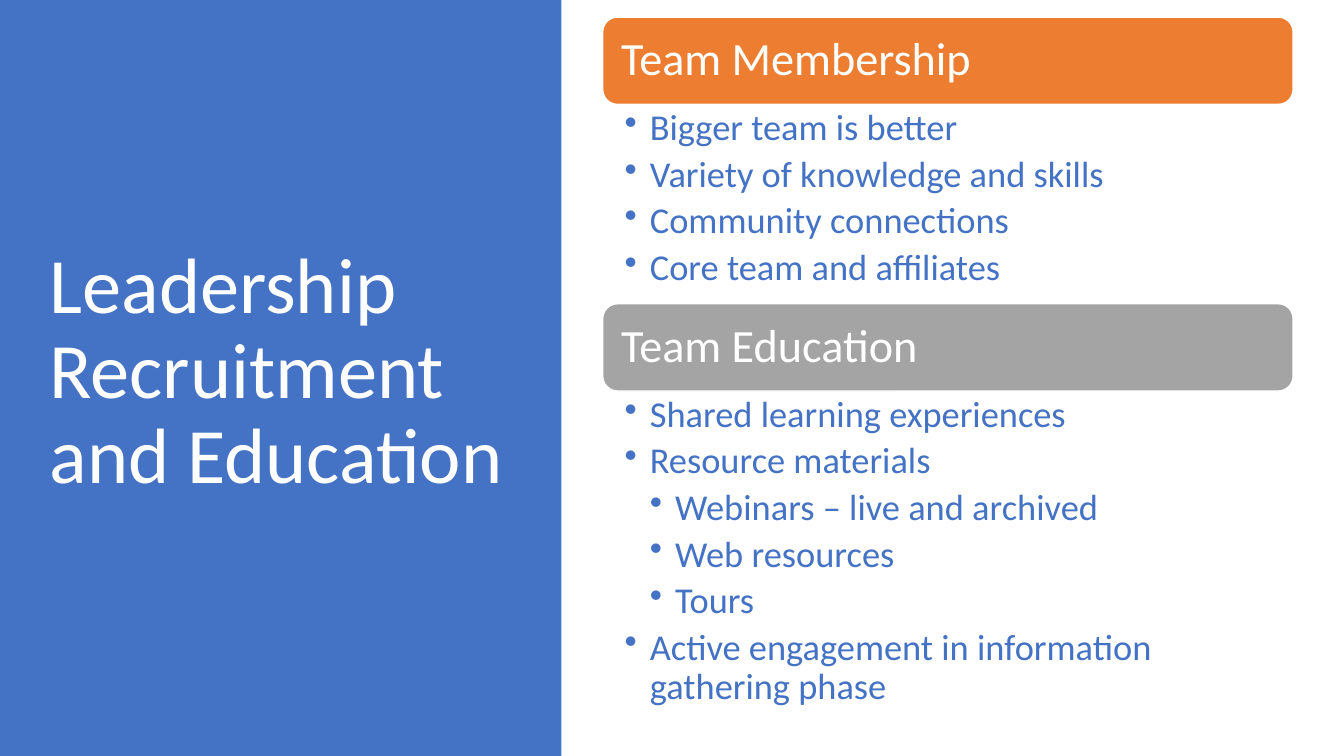
"""Build the slide on leadership recruitment and education."""
import pptx
import pptx.dml.color
import pptx.enum.shapes
import pptx.enum.text
import pptx.oxml
import pptx.oxml.ns
import pptx.util

Pt = pptx.util.Pt
SHAPE = pptx.enum.shapes.MSO_SHAPE
ANCHOR = pptx.enum.text.MSO_ANCHOR
BLUE, ORANGE, GRAY, WHITE = "4472C4", "ED7D31", "A4A4A4", "FFFFFF"
LEFT, WIDTH, HEADER_HEIGHT, INDENT = 430.5, 493.2, 62.4, 18


def color(value):
    return pptx.dml.color.RGBColor.from_string(value)


def write(sp, lines, size, ink, anchor, margins):
    tf = sp.text_frame
    tf.word_wrap = True
    tf.vertical_anchor = anchor
    tf.margin_left, tf.margin_top, tf.margin_right, tf.margin_bottom = map(Pt, margins)
    for i, line in enumerate(lines):
        p = tf.add_paragraph() if i else tf.paragraphs[0]
        p.text = line
        p.alignment = pptx.enum.text.PP_ALIGN.LEFT
        p.line_spacing = 0.9
        p.font.name = "Calibri"
        p.font.size = Pt(size)
        p.font.color.rgb = color(ink)
    return tf.paragraphs


sections = [
    ("Team Membership", ORANGE, 12.2, 142.6, [
        (1, "Bigger team is better"),
        (1, "Variety of knowledge and skills"),
        (1, "Community connections"),
        (1, "Core team and affiliates"),
    ]),
    ("Team Education", GRAY, 216.9, 241.9, [
        (1, "Shared learning experiences"),
        (1, "Resource materials"),
        (2, "Webinars – live and archived"),
        (2, "Web resources"),
        (2, "Tours"),
        (1, "Active engagement in information gathering phase"),
    ]),
]

prs = pptx.Presentation()
prs.slide_width, prs.slide_height = Pt(960), Pt(540)
s = prs.slides.add_slide(prs.slide_layouts[6])

panel = s.shapes.add_shape(SHAPE.RECTANGLE, 0, 0, Pt(401), Pt(540))
panel.shadow.inherit = False
panel.fill.solid()
panel.fill.fore_color.rgb = color(BLUE)
panel.line.fill.background()

title = s.shapes.add_textbox(Pt(28.4), Pt(49.7), Pt(345), Pt(433.5))
write(title, ["Leadership\vRecruitment and Education"], 56, WHITE,
      ANCHOR.MIDDLE, (7.2, 3.6, 7.2, 3.6))

for heading, fill, top, height, bullets in sections:
    header = s.shapes.add_shape(SHAPE.ROUNDED_RECTANGLE, Pt(LEFT), Pt(top),
                                Pt(WIDTH), Pt(HEADER_HEIGHT))
    header.adjustments[0] = 0.17
    header.shadow.inherit = False
    header.fill.solid()
    header.fill.fore_color.rgb = color(fill)
    header.line.color.rgb = color(WHITE)
    header.line.width = Pt(1)
    write(header, [heading], 33, WHITE, ANCHOR.MIDDLE, (10, 10, 10, 10))

    body = s.shapes.add_textbox(Pt(LEFT), Pt(top + HEADER_HEIGHT), Pt(WIDTH), Pt(height))
    paragraphs = write(body, [text for _, text in bullets], 26, BLUE,
                       ANCHOR.TOP, (15.7, 3.6, 18.5, 3.6))
    for i, (p, (level, _)) in enumerate(zip(paragraphs, bullets)):
        p.level = level
        p.space_before = Pt(5.2 if i else 0)
        pPr = p._p.get_or_add_pPr()
        pPr.set("marL", str(Pt(INDENT * level)))
        pPr.set("indent", str(-Pt(INDENT)))
        bullet = pptx.oxml.parse_xml(
            f'<a:buChar {pptx.oxml.ns.nsdecls("a")} char="•"/>')
        pPr.insert_element_before(bullet, "a:tabLst", "a:defRPr", "a:extLst")

prs.save("out.pptx")
